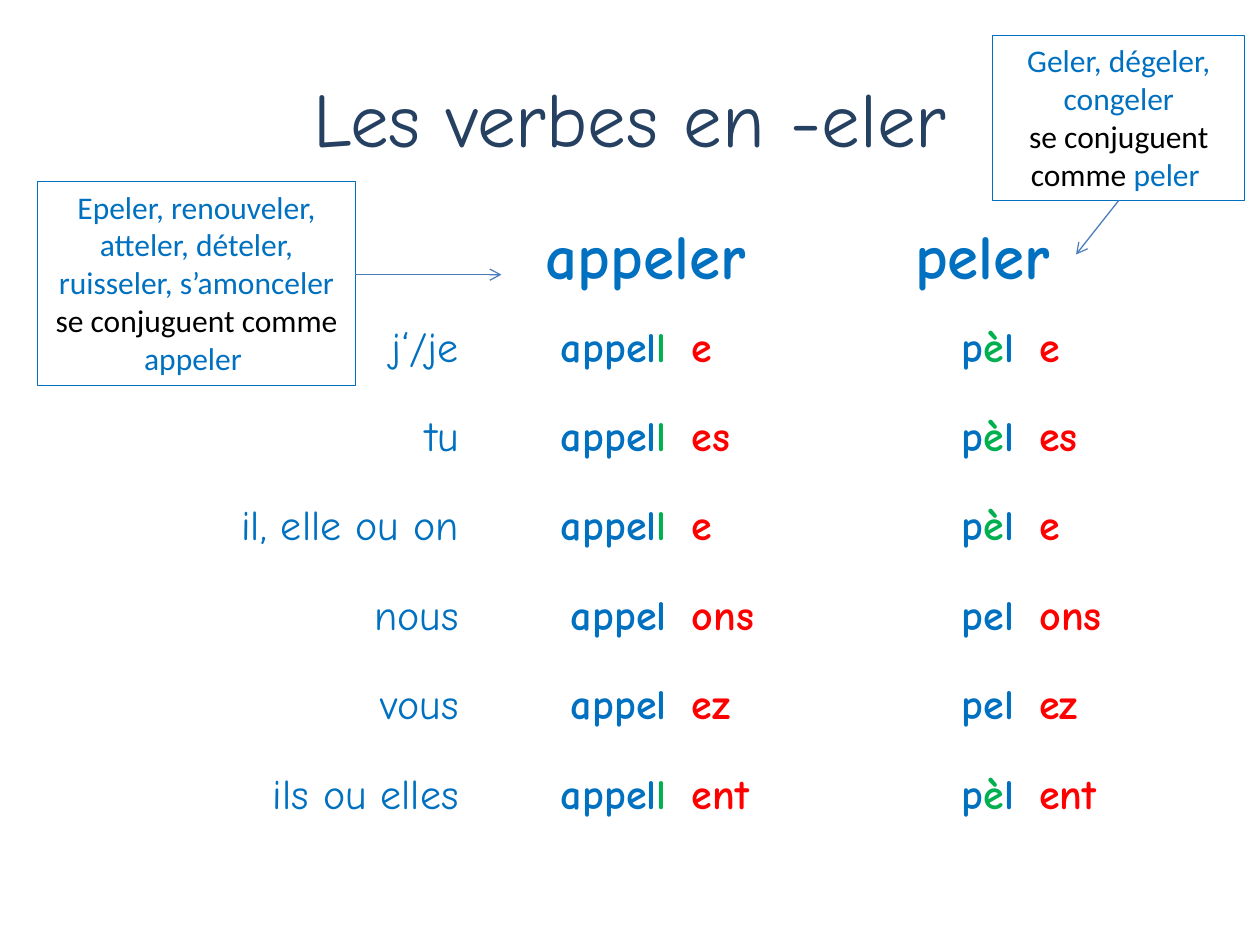
from dataclasses import dataclass

from lxml import etree
from pptx import Presentation
from pptx.dml.color import RGBColor
from pptx.enum.shapes import MSO_CONNECTOR
from pptx.enum.text import MSO_ANCHOR, MSO_AUTO_SIZE, PP_ALIGN as Align
from pptx.oxml.ns import qn
from pptx.slide import Slide
from pptx.util import Inches, Pt

COLOURS = {
    "title": "254061",
    "verb": "0070C0",
    "change": "00B050",
    "ending": "FF0000",
    "text": "000000",
    "arrow": "4B7EBC",
    "white": "FFFFFF",
}


def colour(name):
    return RGBColor.from_string(COLOURS[name])


@dataclass
class SlideBuilder:
    slide: Slide
    school_font: str = "Comic Neue"
    note_font: str = "Calibri"
    line_width: float = 0.75

    def add_runs(self, paragraph, runs, size, font, align=Align.CENTER, bold=False):
        """Add (text, colour name) runs to a paragraph."""
        paragraph.alignment = align
        for text, colour_name in runs:
            run = paragraph.add_run()
            run.text = text
            run.font.name = font
            run.font.size = Pt(size)
            run.font.bold = bold
            run.font.color.rgb = colour(colour_name)

    def title(self, text, left, top, width, height):
        shape = self.slide.shapes.title
        shape.left, shape.top = Inches(left), Inches(top)
        shape.width, shape.height = Inches(width), Inches(height)
        shape.text_frame.vertical_anchor = MSO_ANCHOR.MIDDLE
        self.add_runs(shape.text_frame.paragraphs[0], [(text, "title")], 44, self.school_font)

    def table(self, left, top, widths, row_height, row_count):
        frame = self.slide.shapes.add_table(
            row_count, len(widths), Inches(left), Inches(top),
            Inches(sum(widths)), Inches(row_height * row_count))
        table = frame.table
        table.first_row = table.horz_banding = False
        for column, width in zip(table.columns, widths):
            column.width = Inches(width)
        for row in table.rows:
            row.height = Inches(row_height)
        for cell in table.iter_cells():
            cell.fill.solid()
            cell.fill.fore_color.rgb = colour("white")
            cell.vertical_anchor = MSO_ANCHOR.MIDDLE
        return table

    def cell(self, cell, runs, size=24, align=Align.LEFT, bold=True):
        self.add_runs(cell.text_frame.paragraphs[0], runs, size, self.school_font, align, bold)

    def note(self, verbs, model, left, top, width, height):
        box = self.slide.shapes.add_textbox(
            Inches(left), Inches(top), Inches(width), Inches(height))
        box.line.color.rgb = colour("verb")
        box.line.width = Pt(self.line_width)
        frame = box.text_frame
        frame.word_wrap = True
        frame.auto_size = MSO_AUTO_SIZE.SHAPE_TO_FIT_TEXT
        self.add_runs(frame.paragraphs[0], [(verbs, "verb")], 18, self.note_font)
        self.add_runs(frame.add_paragraph(),
                      [("se conjuguent comme ", "text"), (model + " ", "verb")],
                      18, self.note_font)
        return box

    def arrow(self, start, end):
        connector = self.slide.shapes.add_connector(
            MSO_CONNECTOR.STRAIGHT, *(Inches(value) for value in (*start, *end)))
        connector.line.color.rgb = colour("arrow")
        connector.line.width = Pt(self.line_width)
        properties = connector._element.spPr
        etree.SubElement(properties.find(qn("a:ln")), qn("a:tailEnd"), type="arrow")
        etree.SubElement(properties, qn("a:effectLst"))
        return connector


def main():
    presentation = Presentation()
    presentation.slide_width, presentation.slide_height = Inches(10), Inches(7.5)
    title_only = presentation.slide_layouts[5]
    builder = SlideBuilder(presentation.slides.add_slide(title_only))

    builder.title("Les verbes en -eler", 0.5, 0.3, 9, 1.25)

    # Conjugation table: pronoun, then stem and ending for each verb
    plain = ([("appel", "verb")], [("pel", "verb")])
    changed = ([("appel", "verb"), ("l", "change")],
               [("p", "verb"), ("è", "change"), ("l", "verb")])
    conjugation = [
        ("j‘/je", changed, "e"),
        ("tu", changed, "es"),
        ("il, elle ou on", changed, "e"),
        ("nous", plain, "ons"),
        ("vous", plain, "ez"),
        ("ils ou elles", changed, "ent"),
    ]
    table = builder.table(1.22, 1.7, [2.52, 1.65, 1.12, 1.64, 0.94], 0.71,
                          len(conjugation) + 1)
    for column, verb in ((1, "appeler"), (3, "peler")):
        heading = table.cell(0, column)
        heading.merge(table.cell(0, column + 1))
        builder.cell(heading, [(verb, "verb")], 36, Align.CENTER)
    for row, (pronoun, stems, ending) in enumerate(conjugation, start=1):
        builder.cell(table.cell(row, 0), [(pronoun, "verb")], align=Align.RIGHT, bold=False)
        for column, stem in zip((1, 3), stems):
            builder.cell(table.cell(row, column), stem, align=Align.RIGHT)
            builder.cell(table.cell(row, column + 1), [(ending, "ending")])

    # Notes on verbs that follow each model
    builder.note("Epeler, renouveler, atteler, dételer, ruisseler, s’amonceler",
                 "appeler", 0.3, 1.44, 2.52, 1.62)
    builder.arrow((2.82, 2.18), (3.98, 2.18))
    peler_note = builder.note("Geler, dégeler, congeler", "peler", 7.88, 0.28, 2, 1.31)
    peler_arrow = builder.arrow((8.88, 1.59), (8.54, 2.02))
    peler_arrow.begin_connect(peler_note, 2)

    presentation.save("out.pptx")


if __name__ == "__main__":
    main()
